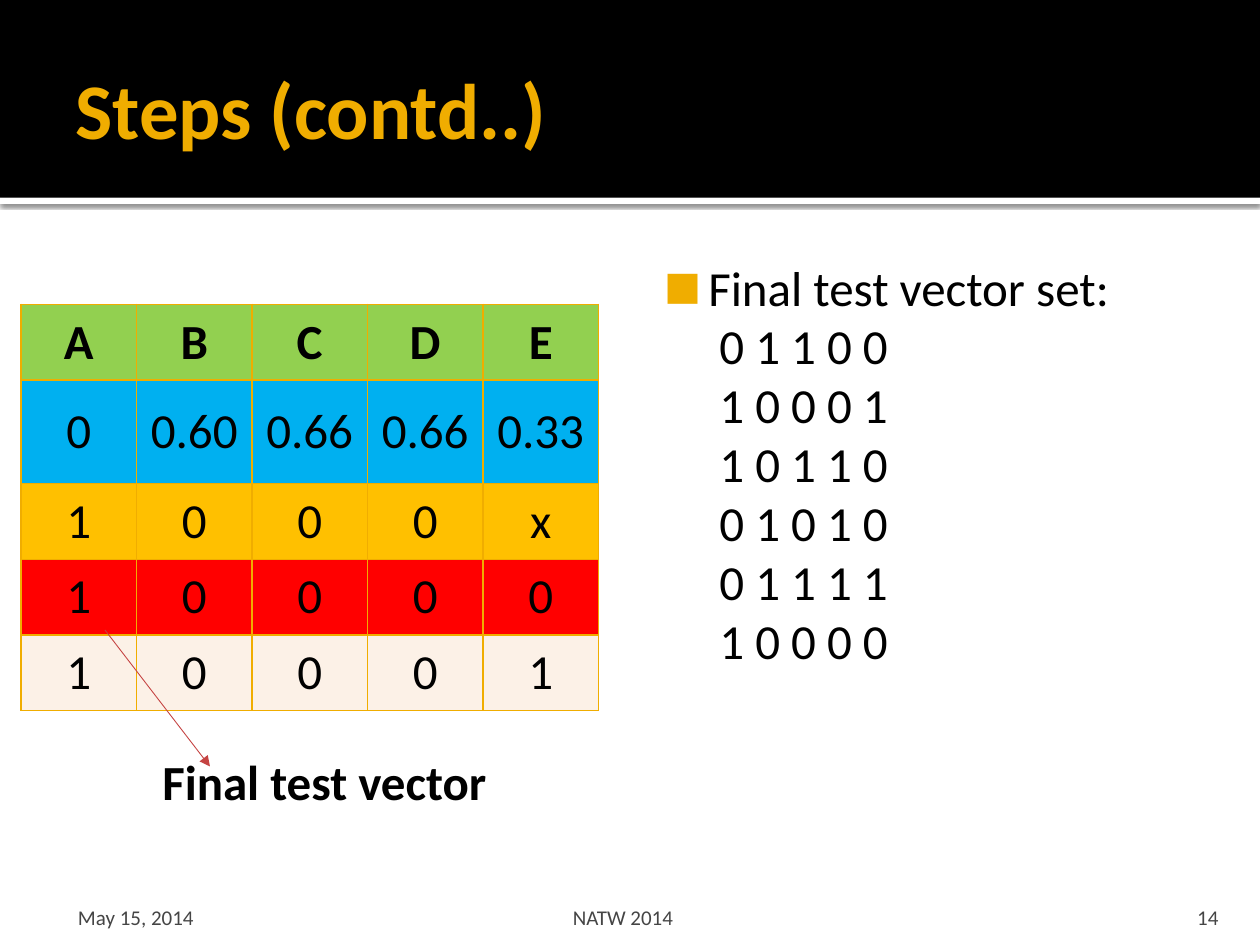
from lxml import etree
from pptx import Presentation
from pptx.dml.color import RGBColor
from pptx.enum import shapes, text
from pptx.oxml import parse_xml
from pptx.oxml.ns import nsdecls, qn
from pptx.util import Pt

# Colours
BLACK, WHITE = RGBColor(0, 0, 0), RGBColor(255, 255, 255)
GOLD = RGBColor(0xF0, 0xAD, 0x00)
GREY = RGBColor(0x45, 0x45, 0x45)
ARROW_RED = RGBColor(0xC5, 0x43, 0x42)
GREEN = RGBColor(0x92, 0xD0, 0x50)
BLUE = RGBColor(0x00, 0xB0, 0xF0)
AMBER = RGBColor(0xFF, 0xC0, 0x00)
RED = RGBColor(0xFF, 0, 0)
CREAM = RGBColor(0xFC, 0xF1, 0xE7)

# Content
TITLE = "Steps (contd..)"
LIST_HEAD = "Final test vector set:"
VECTORS = ["0 1 1 0 0", "1 0 0 0 1", "1 0 1 1 0", "0 1 0 1 0", "0 1 1 1 1", "1 0 0 0 0"]
CAPTION = "Final test vector"
ROWS = [  # fill, height, cells
    (GREEN, 43.2, ["A", "B", "C", "D", "E"]),
    (BLUE, 59.2, ["0", "0.60", "0.66", "0.66", "0.33"]),
    (AMBER, 43.2, ["1", "0", "0", "0", "x"]),
    (RED, 43.2, ["1", "0", "0", "0", "0"]),
    (CREAM, 43.2, ["1", "0", "0", "0", "1"]),
]
LEFT, CENTER, RIGHT = text.PP_ALIGN.LEFT, text.PP_ALIGN.CENTER, text.PP_ALIGN.RIGHT
TOP, MIDDLE, BOTTOM = text.MSO_ANCHOR.TOP, text.MSO_ANCHOR.MIDDLE, text.MSO_ANCHOR.BOTTOM
FOOTERS = [  # text, left, width, alignment, insets
    ("May 15, 2014", 36, 167.8, LEFT, (8.6, 3.6, 3.6, 0)),
    ("NATW 2014", 208, 296, CENTER, (3.6, 3.6, 3.6, 0)),
    ("14", 645.8, 57.6, RIGHT, (7.2, 3.6, 7.2, 0)),
]


def write(p, words, size=28, color=BLACK, bold=False, align=LEFT):
    p.alignment = align
    r = p.add_run()
    r.text = words
    r.font.name, r.font.size, r.font.bold = "Calibri", Pt(size), bold
    r.font.color.rgb = color


def frame(sp, box, insets=(7.2, 3.6, 7.2, 3.6), anchor=TOP):
    sp.left, sp.top, sp.width, sp.height = map(Pt, box)
    tf = sp.text_frame
    tf.word_wrap, tf.auto_size, tf.vertical_anchor = True, text.MSO_AUTO_SIZE.NONE, anchor
    tf.margin_left, tf.margin_top, tf.margin_right, tf.margin_bottom = map(Pt, insets)
    return tf


def text_box(box, **layout):
    return frame(s.shapes.add_textbox(0, 0, 0, 0), box, **layout).paragraphs[0]


def band(top, height, color, layer):
    sp = s.shapes.add_shape(shapes.MSO_SHAPE.RECTANGLE, 0, Pt(top), prs.slide_width, Pt(height))
    sp.shadow.inherit = False
    sp.fill.solid()
    sp.fill.fore_color.rgb = color
    sp.line.fill.background()
    s.shapes._spTree.insert(2 + layer, sp._element)
    return sp


def indent(p, left, first, bullet):
    pPr = p._p.get_or_add_pPr()
    pPr.set("marL", str(Pt(left)))
    pPr.set("indent", str(Pt(first)))
    if not bullet:
        etree.SubElement(pPr, qn("a:buNone"))
        return
    color = etree.SubElement(pPr, qn("a:buClr"))
    etree.SubElement(color, qn("a:srgbClr"), val=str(GOLD))
    etree.SubElement(pPr, qn("a:buSzPct"), val="80000")
    etree.SubElement(pPr, qn("a:buFont"), typeface="Calibri")
    etree.SubElement(pPr, qn("a:buChar"), char="■")


def border(cell):
    for i, side in enumerate("LRTB"):
        cell._tc.get_or_add_tcPr().insert(i, parse_xml(
            f'<a:ln{side} {nsdecls("a")} w="{Pt(1)}"><a:solidFill>'
            f'<a:srgbClr val="{GOLD}"/></a:solidFill></a:ln{side}>'))


prs = Presentation()
prs.slide_width, prs.slide_height = Pt(720), Pt(540)
s = prs.slides.add_slide(prs.slide_layouts[1])

# Header bands, behind everything else
strip = band(113, 3.6, WHITE, 0)
effects = strip._element.spPr.find(qn("a:effectLst"))
effects.append(parse_xml(
    f'<a:outerShdw {nsdecls("a")} blurRad="{Pt(2.5)}" dist="{Pt(0.8)}" dir="5400000">'
    '<a:srgbClr val="000000"><a:alpha val="60000"/></a:srgbClr></a:outerShdw>'))
band(0, 113, BLACK, 1)

# Title
tf = frame(s.shapes.title, (36, 12.2, 648, 98.6), (7.2, 3.6, 3.6, 3.6), MIDDLE)
write(tf.paragraphs[0], TITLE, size=45, color=GOLD, bold=True)

# List of test vectors
tf = frame(s.placeholders[1], (365.8, 139.7, 318.2, 364.3), (4.3, 7.2, 7.2, 3.6))
for i, words in enumerate([LIST_HEAD] + VECTORS):
    p = tf.add_paragraph() if i else tf.paragraphs[0]
    p.space_before = p.space_after = Pt(0)
    write(p, words)
    if i:
        indent(p, 41, 0, bullet=False)
    else:
        indent(p, 34.6, -25.2, bullet=True)

# Table
table = s.shapes.add_table(len(ROWS), 5, Pt(12), Pt(174), Pt(330), Pt(232)).table
for i, (color, height, values) in enumerate(ROWS):
    table.rows[i].height = Pt(height)
    for cell, value in zip(table.rows[i].cells, values):
        cell.fill.solid()
        cell.fill.fore_color.rgb = color
        cell.vertical_anchor = MIDDLE
        write(cell.text_frame.paragraphs[0], value, bold=i == 0, align=CENTER)
        border(cell)

# Caption and its arrow
write(text_box((17.3, 426, 336, 41)), CAPTION, bold=True, align=CENTER)
arrow = s.shapes.add_connector(shapes.MSO_CONNECTOR.STRAIGHT, Pt(60), Pt(360), Pt(120), Pt(438))
arrow.line.color.rgb, arrow.line.width = ARROW_RED, Pt(0.5)
etree.SubElement(arrow.line._get_or_add_ln(), qn("a:tailEnd"), type="triangle")
etree.SubElement(arrow._element.spPr, qn("a:effectLst"))

# Footer
for words, left, width, align, insets in FOOTERS:
    p = text_box((left, 509.8, width, 21.6), insets=insets, anchor=BOTTOM)
    write(p, words, size=12, color=GREY, align=align)

prs.save("out.pptx")
